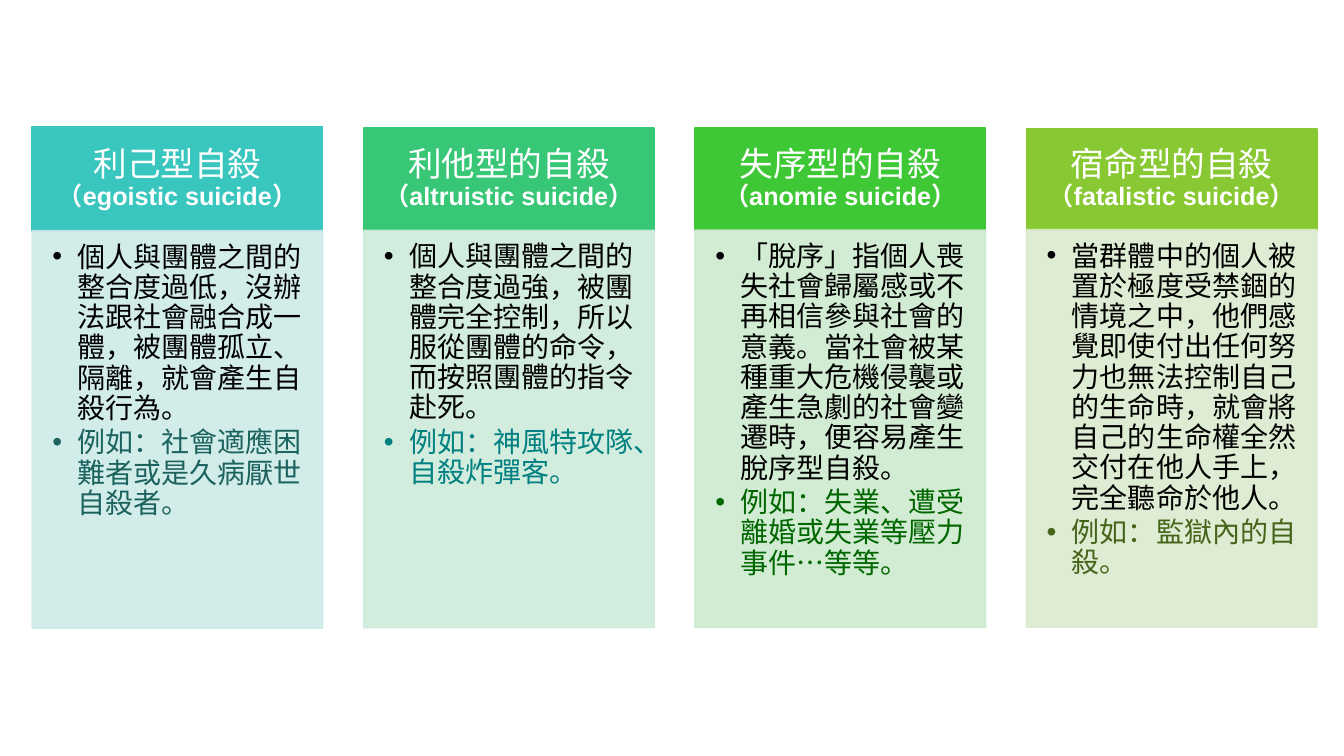
from lxml import etree
from pptx import Presentation
from pptx import util as u
from pptx.dml.color import RGBColor
from pptx.enum import shapes, text
from pptx.oxml.ns import qn

# heading, English name, header fill, body fill, example colour, definition, example
TYPES = [
    ("利己型自殺\v", "（egoistic suicide）", "39C6BE", "CEEAE8", "1C635F",
     "個人與團體之間的整合度過低，沒辦法跟社會融合成一體，被團體孤立、隔離，就會產生自殺行為。",
     "例如：社會適應困難者或是久病厭世自殺者。"),
    ("利他型的自殺", "（altruistic suicide）", "37C776", "CEEBDB", "008080",
     "個人與團體之間的整合度過強，被團體完全控制，所以服從團體的命令，而按照團體的指令赴死。",
     "例如：神風特攻隊、自殺炸彈客。"),
    ("失序型的自殺\v", "（anomie suicide）", "3EC835", "CEEBCF", "006600",
     "「脫序」指個人喪失社會歸屬感或不再相信參與社會的意義。當社會被某種重大危機侵襲或"
     "產生急劇的社會變遷時，便容易產生脫序型自殺。",
     "例如：失業、遭受離婚或失業等壓力事件…等等。"),
    ("宿命型的自殺", "（fatalistic suicide）", "88C933", "DAEBCE", "44641A",
     "當群體中的個人被置於極度受禁錮的情境之中，他們感覺即使付出任何努力也無法控制自己的"
     "生命時，就會將自己的生命權全然交付在他人手上，完全聽命於他人。",
     "例如：監獄內的自殺。"),
]

LEFT, PITCH, WIDTH = 0.32, 3.287, 2.88
HEADER_TOP, HEADER_HEIGHT, BODY_HEIGHT = 1.26, 1.03, 3.94
HEADER_SHRINK, HEADER_DROP = 0.01, 0.02 / 3  # change from one column to the next


def color(value):
    return RGBColor.from_string(value)


def add_box(slide, left, top, width, height, fill, insets, anchor, opacity=100):
    box = slide.shapes.add_shape(shapes.MSO_SHAPE.RECTANGLE,
                                 *(u.Inches(n) for n in (left, top, width, height)))
    box.shadow.inherit = False
    box.fill.solid()
    box.fill.fore_color.rgb = color(fill)
    box.line.color.rgb = color(fill)
    box.line.width = u.Pt(1.25)
    if opacity < 100:
        for tint in box._element.spPr.iter(qn("a:srgbClr")):
            etree.SubElement(tint, qn("a:alpha")).set("val", str(opacity * 1000))
    frame = box.text_frame
    frame.word_wrap = True
    frame.vertical_anchor = anchor
    (frame.margin_left, frame.margin_top,
     frame.margin_right, frame.margin_bottom) = (u.Inches(n) for n in insets)
    return frame


def add_text(para, words, size=20, font="Arial", ink="000000", bold=False):
    """Add words to a paragraph; a vertical tab becomes a line break."""
    first, *rest = words.split("\v")
    span = para.add_run()
    span.text = first
    span.font.size = u.Pt(size)
    span.font.name = font
    span.font.bold = bold
    span.font.color.rgb = color(ink)
    if rest:
        para.add_line_break()


def add_bullet(para):
    para.level = 1
    para.alignment = text.PP_ALIGN.LEFT
    para.line_spacing = 0.9
    para.space_after = u.Pt(3)
    props = para._p.get_or_add_pPr()
    props.set("marL", str(u.Inches(0.25)))
    props.set("indent", str(u.Inches(-0.25)))
    etree.SubElement(props, qn("a:buFont")).set("typeface", "Arial")
    etree.SubElement(props, qn("a:buChar")).set("char", "•")


def add_column(slide, index, heading, english, header_fill, body_fill, ink, definition, example):
    left = LEFT + index * PITCH
    top = HEADER_TOP + index * HEADER_DROP
    height = HEADER_HEIGHT - index * HEADER_SHRINK

    header = add_box(slide, left, top, WIDTH, height, header_fill,
                     (0.19, 0.11, 0.19, 0.11), text.MSO_ANCHOR.MIDDLE)
    para = header.paragraphs[0]
    para.alignment = text.PP_ALIGN.CENTER
    para.line_spacing = 0.9
    add_text(para, heading, size=24, font="Calibri", ink="FFFFFF")
    add_text(para, english, size=18, ink="FFFFFF", bold=True)

    body = add_box(slide, left, top + height, WIDTH, BODY_HEIGHT, body_fill,
                   (0.2, 0.12, 0.2, 0.17), text.MSO_ANCHOR.TOP, opacity=90)
    for para, words, shade in ((body.paragraphs[0], definition, "000000"),
                               (body.add_paragraph(), example, ink)):
        add_bullet(para)
        add_text(para, words, ink=shade)


def main():
    deck = Presentation()
    deck.slide_width, deck.slide_height = u.Inches(13.33), u.Inches(7.5)
    slide = deck.slides.add_slide(deck.slide_layouts[6])
    for index, kind in enumerate(TYPES):
        add_column(slide, index, *kind)
    deck.save("out.pptx")


if __name__ == "__main__":
    main()
